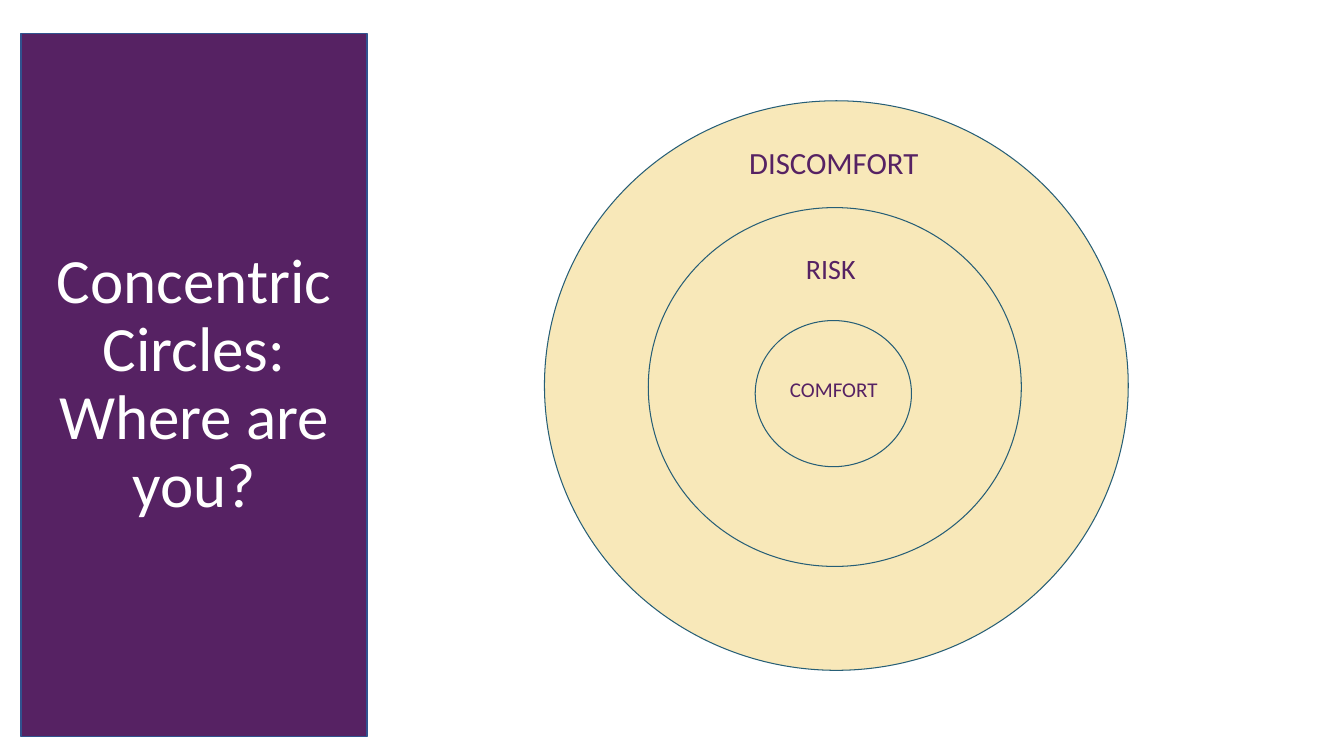
"""Build a slide with a title panel and three labelled concentric circles."""
from typing import NamedTuple

from pptx import Presentation
from pptx.dml.color import RGBColor
from pptx.enum.shapes import MSO_SHAPE as Shape
from pptx.enum.text import MSO_ANCHOR as Anchor, PP_ALIGN as Align
from pptx.util import Inches, Pt

PLUM = RGBColor(0x56, 0x22, 0x63)
CREAM = RGBColor(0xF8, 0xE8, 0xB9)
TEAL = RGBColor(0x26, 0x5E, 0x76)
BLUE = RGBColor(0x31, 0x53, 0x8F)
WHITE = RGBColor(0xFF, 0xFF, 0xFF)


class Box(NamedTuple):
    left: float
    top: float
    width: float
    height: float


class Ring(NamedTuple):
    oval: Box
    label: Box
    text: str
    size: int


RINGS = [
    Ring(Box(5.4, 1, 5.79, 5.65), Box(6.87, 1.33, 2.8, 0.71), "DISCOMFORT", 22),
    Ring(Box(6.43, 2.06, 3.7, 3.56), Box(7.25, 2.39, 1.98, 0.71), "RISK", 20),
    Ring(Box(7.49, 3.18, 1.55, 1.45), Box(7.63, 3.64, 1.28, 0.57), "COMFORT", 15),
]


def write(frame, text: str, *, size: int, color: RGBColor, pad: float = 0.1,
          anchor: Anchor = Anchor.TOP, spacing: float = 1.0) -> None:
    frame.word_wrap = True
    frame.vertical_anchor = anchor
    frame.margin_left = frame.margin_right = Inches(0.1)
    frame.margin_top = frame.margin_bottom = Inches(pad)
    para = frame.paragraphs[0]
    para.alignment = Align.CENTER
    para.line_spacing = spacing
    run = para.add_run()
    run.text = text
    run.font.name = "Calibri"
    run.font.size = Pt(size)
    run.font.color.rgb = color


def draw(slide, kind: Shape, box: Box, fill: RGBColor, line: RGBColor, weight: float):
    shape = slide.shapes.add_shape(kind, *map(Inches, box))
    shape.shadow.inherit = False
    shape.fill.solid()
    shape.fill.fore_color.rgb = fill
    shape.line.color.rgb = line
    shape.line.width = Pt(weight)
    return shape


def main() -> None:
    deck = Presentation()
    deck.slide_width, deck.slide_height = Inches(13.33), Inches(7.5)
    slide = deck.slides.add_slide(deck.slide_layouts[6])

    panel = draw(slide, Shape.RECTANGLE, Box(0.21, 0.33, 3.43, 6.98), PLUM, BLUE, 1)
    write(panel.text_frame, "Concentric Circles: Where are you?", size=45, color=WHITE,
          pad=0.05, anchor=Anchor.MIDDLE, spacing=0.9)

    for ring in RINGS:
        draw(slide, Shape.OVAL, ring.oval, CREAM, TEAL, 0.75)
    for ring in reversed(RINGS):
        label = slide.shapes.add_textbox(*map(Inches, ring.label))
        write(label.text_frame, ring.text, size=ring.size, color=PLUM)

    deck.save("out.pptx")


if __name__ == "__main__":
    main()
